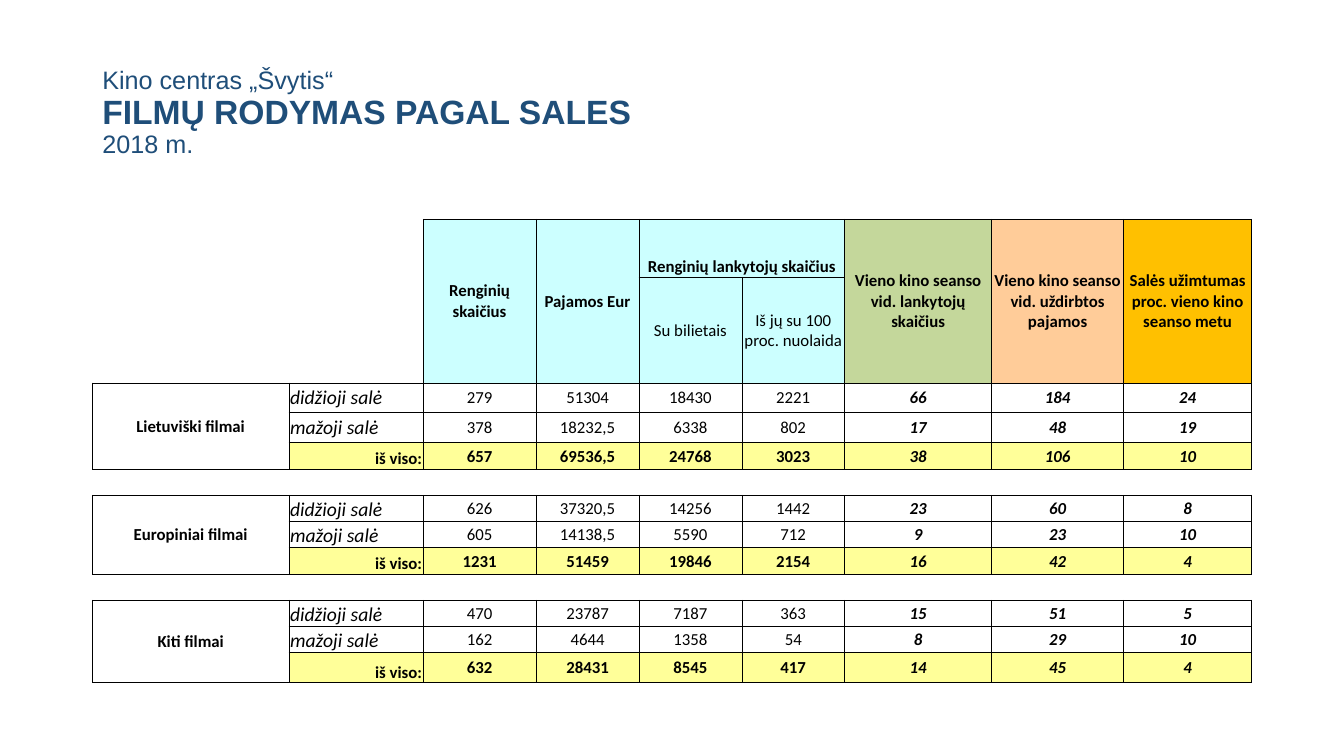
from lxml.etree import SubElement
from pptx import Presentation
from pptx.dml.color import RGBColor
from pptx.enum.text import MSO_ANCHOR, PP_ALIGN
from pptx.oxml.ns import qn
from pptx.util import Pt

BLACK, NAVY = "000000", "1F4E79"
CYAN, GREEN, PEACH, AMBER, YELLOW = "CCFFFF", "C4D79B", "FFCC99", "FFC000", "FFFF99"
COLUMN_WIDTHS = [140.5, 95.75, 80.75, 73.5, 73.5, 73.5, 105, 94.25, 91.5]
ROW_HEIGHTS = [41.5, 75.5, 20.8, 22] + [18.75] * 8 + [21.5]
TITLE_LINES = [
    ("Kino centras „Švytis“", 18, False),
    ("FILMŲ RODYMAS PAGAL SALES", 24, True),
    ("2018 m.", 18, False),
]
HEADERS = [
    (0, 2, 2, 1, "Renginių skaičius", CYAN),
    (0, 3, 2, 1, "Pajamos Eur", CYAN),
    (0, 4, 1, 2, "Renginių lankytojų skaičius", CYAN),
    (1, 4, 1, 1, "Su bilietais", CYAN),
    (1, 5, 1, 1, "Iš jų su 100 proc. nuolaida", CYAN),
    (0, 6, 2, 1, "Vieno kino seanso vid. lankytojų skaičius", GREEN),
    (0, 7, 2, 1, "Vieno kino seanso vid. uždirbtos pajamos", PEACH),
    (0, 8, 2, 1, "Salės užimtumas proc. vieno kino seanso metu", AMBER),
]
HALLS = ["didžioji salė", "mažoji salė", "iš viso:"]
FILM_GROUPS = {
    "Lietuviški filmai": [
        ["279", "51304", "18430", "2221", "66", "184", "24"],
        ["378", "18232,5", "6338", "802", "17", "48", "19"],
        ["657", "69536,5", "24768", "3023", "38", "106", "10"],
    ],
    "Europiniai filmai": [
        ["626", "37320,5", "14256", "1442", "23", "60", "8"],
        ["605", "14138,5", "5590", "712", "9", "23", "10"],
        ["1231", "51459", "19846", "2154", "16", "42", "4"],
    ],
    "Kiti filmai": [
        ["470", "23787", "7187", "363", "15", "51", "5"],
        ["162", "4644", "1358", "54", "8", "29", "10"],
        ["632", "28431", "8545", "417", "14", "45", "4"],
    ],
}


def color(value):
    """Return the colour of a hex string."""
    return RGBColor.from_string(value)


def apply(target, formats):
    """Set every attribute in a dict of format values."""
    for name, value in formats.items():
        setattr(target, name, value)


def add_span(para, text, tint, **formats):
    """Add formatted text to a paragraph."""
    span = para.add_run()
    span.text = text
    apply(span.font, formats)
    span.font.color.rgb = color(tint)


def prepare_cell(cell, sides):
    """Clear a cell and draw thin black borders on the given sides."""
    apply(cell, dict(margin_left=Pt(0.7), margin_right=Pt(0.7), margin_top=Pt(0.7),
                     margin_bottom=0, vertical_anchor=MSO_ANCHOR.MIDDLE))
    properties = cell._tc.get_or_add_tcPr()
    for side in "LRTB":
        line = SubElement(properties, qn(f"a:ln{side}"), w=str(Pt(0.5)))
        if side in sides:
            SubElement(SubElement(line, qn("a:solidFill")), qn("a:srgbClr"), val=BLACK)
        else:
            SubElement(line, qn("a:noFill"))
    cell.fill.background()


def fill_cell(cell, text, fill=None, align=PP_ALIGN.CENTER, anchor=MSO_ANCHOR.MIDDLE,
              size=12, bold=False, italic=False):
    """Write text into a cell and colour its background."""
    cell.vertical_anchor = anchor
    if fill:
        cell.fill.solid()
        cell.fill.fore_color.rgb = color(fill)
    para = cell.text_frame.paragraphs[0]
    para.alignment = align
    add_span(para, text, BLACK, name="Calibri", size=Pt(size), bold=bold, italic=italic)


def add_title(page, left, top, width, height):
    """Place the three-line title."""
    frame = page.shapes.add_textbox(Pt(left), Pt(top), Pt(width), Pt(height)).text_frame
    apply(frame, dict(word_wrap=True, vertical_anchor=MSO_ANCHOR.MIDDLE))
    para = frame.paragraphs[0]
    para.line_spacing = 0.9
    for index, (text, size, bold) in enumerate(TITLE_LINES):
        if index:
            para.add_line_break()
        add_span(para, text, NAVY, name="Arial", size=Pt(size), bold=bold)


def fill_headers(table):
    """Write the two header rows and merge their cells."""
    table.cell(0, 0).merge(table.cell(1, 1))
    for row, column, rows, columns, text, fill in HEADERS:
        cell = table.cell(row, column)
        if rows * columns > 1:
            cell.merge(table.cell(row + rows - 1, column + columns - 1))
        anchor = MSO_ANCHOR.BOTTOM if columns > 1 else MSO_ANCHOR.MIDDLE
        fill_cell(cell, text, fill, anchor=anchor, bold=row == 0)


def fill_group(table, first, name, records):
    """Write one film group: its name, two halls and the total."""
    table.cell(first, 0).merge(table.cell(first + 2, 0))
    fill_cell(table.cell(first, 0), name, bold=True)
    for offset, (hall, values) in enumerate(zip(HALLS, records)):
        row, total = first + offset, offset == 2
        fill = YELLOW if total else None
        label = table.cell(row, 1)
        if total:
            fill_cell(label, hall, fill, PP_ALIGN.RIGHT, MSO_ANCHOR.BOTTOM, bold=True)
        else:
            anchor = MSO_ANCHOR.MIDDLE if first == 2 else MSO_ANCHOR.BOTTOM
            fill_cell(label, hall, fill, PP_ALIGN.LEFT, anchor, size=14, italic=True)
        for column, value in enumerate(values, 2):
            average = column >= 6
            fill_cell(table.cell(row, column), value, fill,
                      bold=total or average, italic=average)


def add_hall_table(page, left, top, width, height):
    """Place the table of screenings by hall."""
    table = page.shapes.add_table(len(ROW_HEIGHTS), len(COLUMN_WIDTHS), Pt(left), Pt(top),
                                  Pt(width), Pt(height)).table
    apply(table, dict(first_row=False, horz_banding=False))
    for column, share in zip(table.columns, COLUMN_WIDTHS):
        column.width = Pt(width * share / sum(COLUMN_WIDTHS))
    for row, share in zip(table.rows, ROW_HEIGHTS):
        row.height = Pt(height * share / sum(ROW_HEIGHTS))
    for row in range(len(ROW_HEIGHTS)):
        for column in range(len(COLUMN_WIDTHS)):
            corner, gap = row < 2 and column < 2, row in (5, 9)
            cell = table.cell(row, column)
            prepare_cell(cell, "RB" if corner else "TB" if gap else "LRTB")
            if corner or gap:
                SubElement(cell.text_frame.paragraphs[0]._p, qn("a:endParaRPr"), sz="1200")
    fill_headers(table)
    for index, (name, records) in enumerate(FILM_GROUPS.items()):
        fill_group(table, 2 + 4 * index, name, records)


def main():
    """Build and save the deck."""
    deck = Presentation()
    apply(deck, dict(slide_width=Pt(960), slide_height=Pt(540)))
    page = deck.slides.add_slide(deck.slide_layouts[6])
    add_title(page, 66, 28.75, 828, 104.4)
    add_hall_table(page, 66, 156.5, 828.25, 331.3)
    deck.save("out.pptx")


if __name__ == "__main__":
    main()
